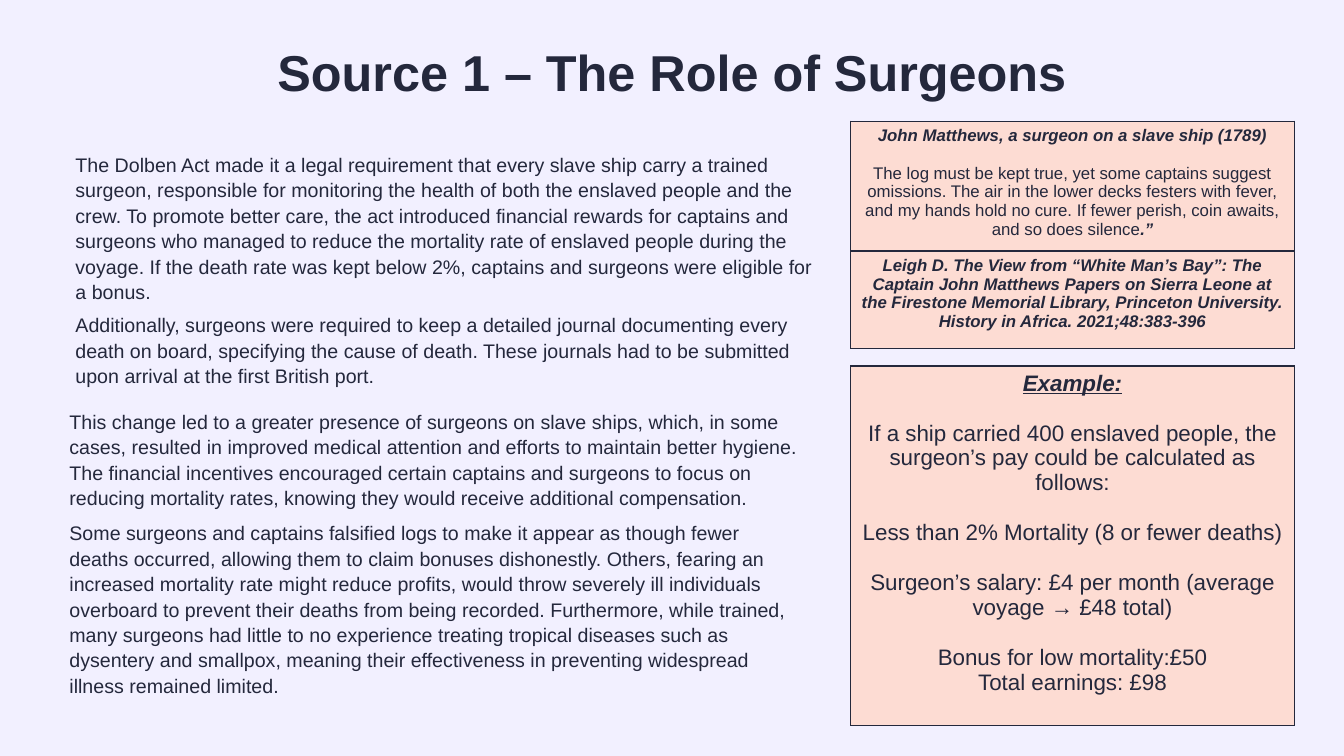
from dataclasses import dataclass

from lxml import etree
from pptx import Presentation
from pptx.dml.color import RGBColor
from pptx.enum import text
from pptx.oxml import ns
from pptx.util import Pt

INK = RGBColor(0x24, 0x28, 0x3C)
PEACH = RGBColor(0xFD, 0xDC, 0xD3)
LAVENDER = RGBColor(0xF2, 0xF0, 0xFF)
FONT = "Arial"
BORDER = 1
TABLE_LEFT, TABLE_WIDTH = 607.7, 316.8


@dataclass(frozen=True)
class Span:
    words: str
    strong: bool = False


@dataclass(frozen=True)
class Para:
    spans: tuple[Span, ...]
    gap: float = 0
    underline: bool = False


@dataclass(frozen=True)
class Row:
    height: float
    paras: tuple[Para, ...]


@dataclass(frozen=True)
class Panel:
    top: float
    size: float
    rows: tuple[Row, ...]


@dataclass(frozen=True)
class TextBlock:
    left: float
    top: float
    width: float
    height: float
    words: str
    size: float = 14
    spacing: float = 1.08
    bold: bool = False
    align: text.PP_ALIGN = text.PP_ALIGN.LEFT
    anchor: text.MSO_ANCHOR = text.MSO_ANCHOR.TOP


def plain(words: str, gap: float = 0) -> Para:
    return Para((Span(words),), gap)


def strong(words: str, underline: bool = False) -> Para:
    return Para((Span(words, True),), underline=underline)


BLOCKS = (
    TextBlock(66.2, 21.6, 828, 64.8, "Source 1 – The Role of Surgeons", 36, 0.9, True,
              text.PP_ALIGN.CENTER, text.MSO_ANCHOR.MIDDLE),
    TextBlock(46.8, 104.4, 550, 108.7,
              "The Dolben Act made it a legal requirement that every slave ship carry a trained "
              "surgeon, responsible for monitoring the health of both the enslaved people and the "
              "crew. To promote better care, the act introduced financial rewards for captains and "
              "surgeons who managed to reduce the mortality rate of enslaved people during the "
              "voyage. If the death rate was kept below 2%, captains and surgeons were eligible "
              "for a bonus."),
    TextBlock(46.8, 218.9, 550, 58.3,
              "Additionally, surgeons were required to keep a detailed journal documenting every "
              "death on board, specifying the cause of death. These journals had to be submitted "
              "upon arrival at the first British port."),
    TextBlock(42.5, 288, 550, 74.9,
              "This change led to a greater presence of surgeons on slave ships, which, in some "
              "cases, resulted in improved medical attention and efforts to maintain better "
              "hygiene. The financial incentives encouraged certain captains and surgeons to focus "
              "on reducing mortality rates, knowing they would receive additional compensation."),
    TextBlock(42.5, 367.5, 536.4, 126,
              "Some surgeons and captains falsified logs to make it appear as though fewer deaths "
              "occurred, allowing them to claim bonuses dishonestly. Others, fearing an increased "
              "mortality rate might reduce profits, would throw severely ill individuals overboard "
              "to prevent their deaths from being recorded. Furthermore, while trained, many "
              "surgeons had little to no experience treating tropical diseases such as dysentery "
              "and smallpox, meaning their effectiveness in preventing widespread illness remained "
              "limited."),
)

PANELS = (
    Panel(86.6, 12, (
        Row(87.8, (
            strong("John Matthews, a surgeon on a slave ship (1789)"),
            Para((Span("The log must be kept true, yet some captains suggest omissions. The air in "
                       "the lower decks festers with fever, and my hands hold no cure. If fewer "
                       "perish, coin awaits, and so does silence"),
                  Span(".”", True)), 13.4),
        )),
        Row(69.6, (
            strong("Leigh D. The View from “White Man’s Bay”: The Captain John Matthews Papers on "
                   "Sierra Leone at the Firestone Memorial Library, Princeton University. History "
                   "in Africa. 2021;48:383-396"),
        )),
    )),
    Panel(261.4, 16, (
        Row(257, (
            strong("Example:", underline=True),
            plain("If a ship carried 400 enslaved people, the surgeon’s pay could be calculated "
                  "as follows:", 17.9),
            plain("Less than 2% Mortality (8 or fewer deaths)", 17.9),
            plain("Surgeon’s salary: £4 per month (average voyage → £48 total)", 17.9),
            plain("Bonus for low mortality:£50", 17.9),
            plain("Total earnings: £98"),
        )),
    )),
)


def style_font(font, size: float) -> None:
    font.name = FONT
    font.size = Pt(size)
    font.color.rgb = INK


def add_block(page, block: TextBlock) -> None:
    box = page.shapes.add_textbox(Pt(block.left), Pt(block.top), Pt(block.width), Pt(block.height))
    frame = box.text_frame
    frame.word_wrap = True
    frame.vertical_anchor = block.anchor
    para = frame.paragraphs[0]
    para.text = block.words
    para.alignment = block.align
    para.line_spacing = block.spacing
    style_font(para.font, block.size)
    para.font.bold = block.bold


def add_borders(cell) -> None:
    properties = cell._tc.get_or_add_tcPr()
    for position, side in enumerate(("lnL", "lnR", "lnT", "lnB")):
        line = etree.Element(ns.qn(f"a:{side}"), w=str(Pt(BORDER)))
        fill = etree.SubElement(line, ns.qn("a:solidFill"))
        etree.SubElement(fill, ns.qn("a:srgbClr"), val=str(INK))
        properties.insert(position, line)


def fill_cell(cell, paras: tuple[Para, ...], size: float) -> None:
    cell.fill.solid()
    cell.fill.fore_color.rgb = PEACH
    add_borders(cell)
    frame = cell.text_frame
    for index, entry in enumerate(paras):
        para = frame.add_paragraph() if index else frame.paragraphs[0]
        para.alignment = text.PP_ALIGN.CENTER
        if entry.gap:
            para.space_before = Pt(entry.gap)
        style_font(para.font, size)
        para.font.underline = entry.underline
        uniform = len({span.strong for span in entry.spans}) == 1
        if uniform:
            para.font.bold = para.font.italic = entry.spans[0].strong
        for span in entry.spans:
            run = para.add_run()
            run.text = span.words
            if not uniform:
                run.font.bold = run.font.italic = span.strong


def add_panel(page, panel: Panel) -> None:
    height = sum(row.height for row in panel.rows)
    table = page.shapes.add_table(len(panel.rows), 1, Pt(TABLE_LEFT), Pt(panel.top),
                                  Pt(TABLE_WIDTH), Pt(height)).table
    table.first_row = table.horz_banding = False
    for index, row in enumerate(panel.rows):
        table.rows[index].height = Pt(row.height)
        fill_cell(table.cell(index, 0), row.paras, panel.size)


def main() -> None:
    deck = Presentation()
    deck.slide_width, deck.slide_height = Pt(960), Pt(540)
    page = deck.slides.add_slide(deck.slide_layouts[6])
    page.background.fill.solid()
    page.background.fill.fore_color.rgb = LAVENDER
    for block in BLOCKS:
        add_block(page, block)
    for panel in PANELS:
        add_panel(page, panel)
    deck.save("out.pptx")


if __name__ == "__main__":
    main()
